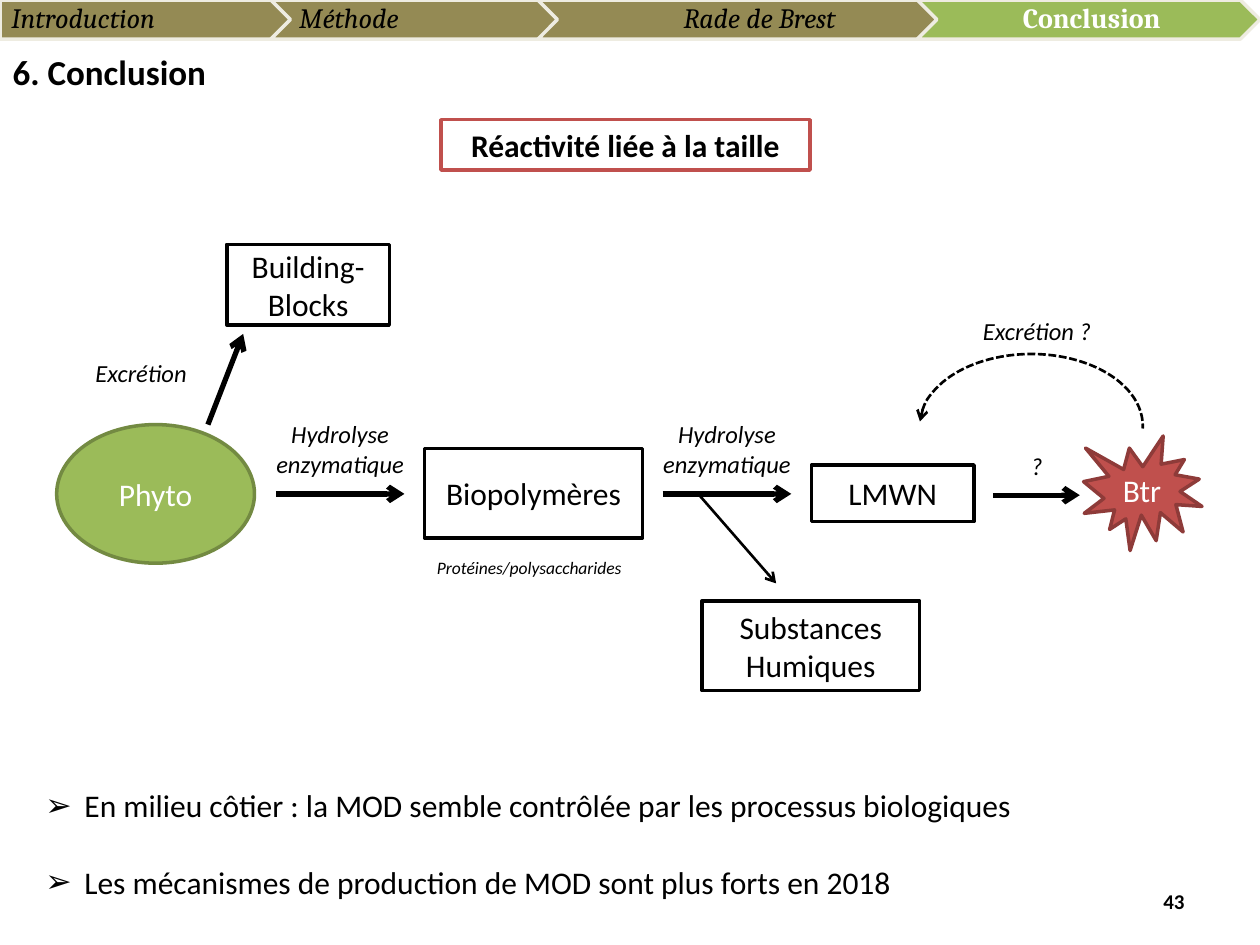
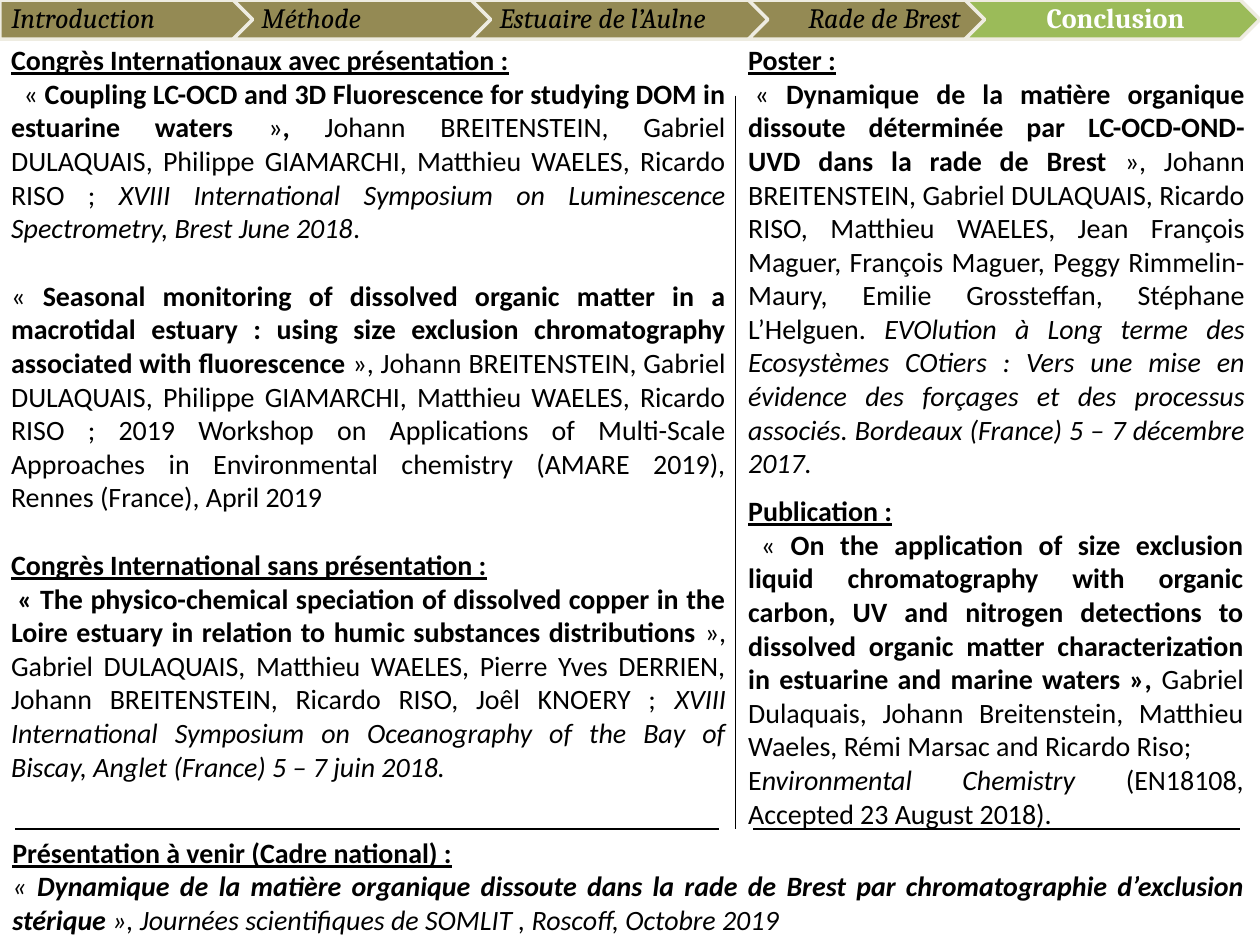
from lxml.etree import SubElement
from pptx import Presentation
from pptx.dml.color import RGBColor
from pptx.enum.dml import MSO_LINE
from pptx.enum.shapes import MSO_CONNECTOR, MSO_SHAPE
from pptx.enum.text import MSO_ANCHOR, MSO_AUTO_SIZE, PP_ALIGN
from pptx.oxml.ns import qn
from pptx.util import Inches, Pt

HUES = {
    "ink": "000000", "paper": "FFFFFF", "olive": "948A54", "cream": "EEECE1",
    "green": "9BBB59", "moss": "738A42", "red": "C0504D", "wine": "8E3B39",
}
FLAGS = {"b": "bold", "i": "italic", "u": "underline"}
LEFT, MID, RIGHT, JUST = (
    PP_ALIGN.LEFT, PP_ALIGN.CENTER, PP_ALIGN.RIGHT, PP_ALIGN.JUSTIFY)
RECT = MSO_SHAPE.RECTANGLE

# Navigation band: label, left, width, alignment; the last step is current
STEPS_1 = [
    ("Introduction", 0, 2.72, LEFT),
    ("Méthode", 2.15, 2.72, LEFT),
    ("Rade de Brest", 4.27, 3.47, MID),
    ("Conclusion", 7.28, 2.72, MID),
]
STEPS_2 = [
    ("Introduction", 0, 2.34, LEFT),
    ("Méthode", 1.85, 2.34, LEFT),
    ("Estuaire de l’Aulne", 3.74, 2.74, LEFT),
    ("Rade de Brest", 5.94, 2.11, MID),
    ("Conclusion", 7.66, 2.34, MID),
]

# Diagram: text, box, preset, fill, line, text colour
NODES = [
    ("Phyto", (0.45, 3.37, 1.57, 1.1), MSO_SHAPE.OVAL, "green", "moss", "paper"),
    ("Biopolymères", (3.37, 3.56, 1.73, 0.71), RECT, "paper", "ink", "ink"),
    ("LMWN", (6.44, 3.69, 1.29, 0.45), RECT, "paper", "ink", "ink"),
    ("Btr", (8.6, 3.46, 0.94, 0.91), MSO_SHAPE.EXPLOSION1, "red", "wine", "paper"),
    ("Building-Blocks", (1.8, 1.94, 1.29, 0.64), RECT, "paper", "ink", "ink"),
    ("Substances\nHumiques", (5.57, 4.77, 1.73, 0.71), RECT, "paper", "ink", "ink"),
]
# From, to, width
ARROWS = [
    ((2.19, 3.92), (3.21, 3.92), 3),
    ((5.26, 3.92), (6.28, 3.92), 3),
    ((7.88, 3.93), (8.57, 3.93), 3),
    ((1.65, 3.37), (1.93, 2.65), 3),
    ((5.55, 3.93), (6.16, 4.63), 1.5),
]
# Text, left, top, height
LABELS = [
    ("Hydrolyse enzymatique", 2.03, 3.28, 0.57),
    ("Hydrolyse enzymatique", 5.1, 3.28, 0.57),
    ("?", 7.56, 3.53, 0.34),
    ("Excrétion ?", 7.56, 2.46, 0.34),
    ("Excrétion", 0.45, 2.79, 0.34),
]
POINTS = [
    "En milieu côtier : la MOD semble contrôlée par les processus biologiques",
    "Les mécanismes de production de MOD sont plus forts en 2018",
]

# References: box, then paragraphs of (first indent, space before, runs)
GAP = 19.5
TALKS = (-0.01, 0.29, 5.87, 6.56), [
    (0, 0, [("bu", "Congrès Internationaux avec présentation :")]),
    (0.1, 0, [
        ("", "« "),
        ("b", "Coupling LC-OCD and 3D Fluorescence for studying DOM in "
              "estuarine waters "),
        ("", "»"), ("b", ", "),
        ("", "Johann BREITENSTEIN, Gabriel DULAQUAIS, Philippe GIAMARCHI, "
             "Matthieu WAELES, Ricardo RISO ; "),
        ("i", "XVIII International Symposium on Luminescence Spectrometry, "
              "Brest June 2018"),
        ("", ".")]),
    (0, GAP, [
        ("", "« "),
        ("b", "Seasonal monitoring of dissolved organic matter in a macrotidal "
              "estuary : using size exclusion chromatography associated with "
              "fluorescence "),
        ("", "», Johann BREITENSTEIN, Gabriel DULAQUAIS, Philippe GIAMARCHI, "
             "Matthieu WAELES, Ricardo RISO ; 2019 Workshop on Applications of "
             "Multi-Scale Approaches in Environmental chemistry (AMARE 2019), "
             "Rennes (France), April 2019")]),
    (0, GAP, [("bu", "Congrès International sans présentation :")]),
    (0.05, 0, [
        ("b", "« The physico-chemical speciation of dissolved copper in the "
              "Loire estuary in relation to humic substances distributions "),
        ("", "», Gabriel DULAQUAIS, Matthieu WAELES, Pierre Yves DERRIEN, "
             "Johann BREITENSTEIN, Ricardo RISO, Joêl KNOERY ; "),
        ("i", "XVIII International Symposium on Oceanography of the Bay of "
              "Biscay, Anglet (France) 5 – 7 juin 2018.")]),
]
PAPER = (5.84, 3.87, 4.13, 3.33), [
    (0, 0, [("bu", "Publication :")]),
    (0.1, 0, [
        ("", "« "),
        ("b", "On the application of size exclusion liquid chromatography with "
              "organic carbon, UV and nitrogen detections to dissolved organic "
              "matter characterization in estuarine and marine waters », "),
        ("", "Gabriel Dulaquais, Johann Breitenstein, Matthieu Waeles, "
             "Rémi Marsac and Ricardo Riso;")]),
    (0, 0, [
        ("", "E"), ("i", "nvironmental Chemistry"),
        ("", " (EN18108, Accepted 23 August 2018).")]),
]
POSTER = (5.84, 0.29, 4.14, 3.6), [
    (0, 0, [("bu", "Poster :")]),
    (0.05, 0, [
        ("", "« "),
        ("b", "Dynamique de la matière organique dissoute déterminée par "
              "LC-OCD-OND-UVD dans la rade de Brest"),
        ("", " », Johann BREITENSTEIN, Gabriel DULAQUAIS, Ricardo RISO, "
             "Matthieu WAELES, Jean François Maguer, François Maguer, "
             "Peggy Rimmelin-Maury, Emilie Grossteffan, Stéphane L’Helguen. "),
        ("i", "EVOlution à Long terme des Ecosystèmes COtiers : Vers une mise "
              "en évidence des forçages et des processus associés. Bordeaux "
              "(France) 5 – 7 décembre 2017.")]),
]
COMING = (0, 6.58, 9.98, 0.91), [
    (0, 0, [("bu", "Présentation à venir (Cadre national) :")]),
    (0, 0, [
        ("i", "« "),
        ("bi", "Dynamique de la matière organique dissoute dans la rade de "
               "Brest par chromatographie d’exclusion stérique"),
        ("i", " », Journées scientifiques de SOMLIT , Roscoff, Octobre 2019")]),
]
RULES = [
    ((5.84, 0.76), (5.84, 6.58)),
    ((0.12, 6.58), (5.71, 6.58)),
    ((5.98, 6.58), (9.84, 6.58)),
]


def hue(name):
    return RGBColor.from_string(HUES[name])


def apply(item, **values):
    for key, value in values.items():
        setattr(item, key, value)


def place(shape, box):
    apply(shape, **dict(zip(("left", "top", "width", "height"), map(Inches, box))))


def write(shape, paras, size, color="ink", font="Calibri",
          anchor=MSO_ANCHOR.TOP, **form):
    """Fill a shape with paragraphs of (style, text) runs."""
    frame = shape.text_frame
    apply(frame, word_wrap=True, auto_size=MSO_AUTO_SIZE.NONE,
          vertical_anchor=anchor)
    for n, runs in enumerate(paras):
        para = frame.paragraphs[0] if n == 0 else frame.add_paragraph()
        apply(para, **{"space_before": Pt(0), **form})
        for style, text in runs:
            run = para.add_run()
            run.text = text
            apply(run.font, name=font, size=Pt(size),
                  **{name: key in style for key, name in FLAGS.items()})
            run.font.color.rgb = hue(color)
    return frame


def plain(text, style=""):
    return [[(style, line)] for line in text.split("\n")]


def label(slide, box, paras, size, **form):
    shape = slide.shapes.add_textbox(*map(Inches, box))
    return write(shape, paras, size, **form)


def draw(slide, kind, box, fill, line, width=2):
    shape = slide.shapes.add_shape(kind, *map(Inches, box))
    shape.shadow.inherit = False
    if fill:
        shape.fill.solid()
        shape.fill.fore_color.rgb = hue(fill)
    else:
        shape.fill.background()
    shape.line.color.rgb = hue(line)
    shape.line.width = Pt(width)
    return shape


def tip(shape, end):
    """Put an open arrowhead on the headEnd or tailEnd of a line."""
    SubElement(shape.line._get_or_add_ln(), qn("a:" + end), type="arrow")


def link(slide, start, stop, width):
    line = slide.shapes.add_connector(
        MSO_CONNECTOR.STRAIGHT, *map(Inches, start + stop))
    line.line.color.rgb = hue("ink")
    line.line.width = Pt(width)
    SubElement(line._element.spPr, qn("a:effectLst"))
    return line


def band(slide, steps):
    for n, (text, left, width, align) in enumerate(steps):
        last = n == len(steps) - 1
        shape = draw(slide, MSO_SHAPE.CHEVRON if n else MSO_SHAPE.PENTAGON,
                     (left, 0, width, 0.31), "green" if last else "olive", "cream")
        frame = write(shape, plain(text, "b" if last else "i"), 16,
                      "paper" if last else "ink", "Cambria", MSO_ANCHOR.MIDDLE,
                      alignment=align, line_spacing=0.9)
        apply(frame, margin_left=Inches(0.07 if n else 0.09),
              margin_right=Inches(0.02))


def sum_up(deck):
    slide = deck.slides.add_slide(deck.slide_layouts[1])
    for spare in list(slide.placeholders)[2:]:
        spare._element.getparent().remove(spare._element)
    title, body = slide.shapes.title, slide.placeholders[1]
    place(title, (0, 0.3, 10, 0.54))
    write(title, plain("6. Conclusion", "b"), 20, anchor=MSO_ANCHOR.MIDDLE,
          alignment=LEFT)
    place(body, (0.26, 6.19, 8.66, 1.31))
    frame = write(body, [[("", point)] for point in POINTS], 18, alignment=LEFT)
    for n, para in enumerate(frame.paragraphs):
        para.space_before = Pt(22 if n else 0)
        props = para._p.get_or_add_pPr()
        props.set("marL", str(Inches(0.31)))
        props.set("indent", str(-Inches(0.31)))
        SubElement(props, qn("a:buChar"), char="➢")

    label(slide, (7.17, 6.95, 2.33, 0.4), plain("43", "b"), 12,
          anchor=MSO_ANCHOR.MIDDLE, alignment=RIGHT)
    theme = draw(slide, RECT, (3.5, 0.95, 2.93, 0.4), "paper", "red")
    write(theme, plain("Réactivité liée à la taille", "b"), 18, alignment=MID)
    for text, box, kind, fill, line, color in NODES:
        write(draw(slide, kind, box, fill, line), plain(text), 18, color,
              anchor=MSO_ANCHOR.MIDDLE, alignment=MID)
    for start, stop, width in ARROWS:
        tip(link(slide, start, stop, width), "tailEnd")
    loop = draw(slide, MSO_SHAPE.ARC, (7.3, 2.81, 1.77, 1.14), None, "ink", 1.5)
    loop.adjustments[0], loop.adjustments[1] = 109.33, 0.83
    loop.line.dash_style = MSO_LINE.SQUARE_DOT
    tip(loop, "headEnd")
    for text, left, top, height in LABELS:
        label(slide, (left, top, 1.34, height), plain(text, "i"), 14,
              alignment=MID)
    label(slide, (3.37, 4.37, 1.73, 0.27),
          plain("Protéines/polysaccharides", "i"), 10)
    band(slide, STEPS_1)


def cite(deck):
    slide = deck.slides.add_slide(deck.slide_layouts[6])
    band(slide, STEPS_2)
    for box, paras in (TALKS, PAPER, POSTER, COMING):
        frame = label(slide, box, [runs for *_, runs in paras], 16, alignment=JUST)
        for para, (indent, gap, _) in zip(frame.paragraphs, paras):
            para.space_before = Pt(gap)
            para._p.get_or_add_pPr().set("indent", str(Inches(indent)))
    for start, stop in RULES:
        link(slide, start, stop, 0.75)


def main():
    deck = Presentation()
    apply(deck, slide_width=Inches(10), slide_height=Inches(7.5))
    sum_up(deck)
    cite(deck)
    deck.save("out.pptx")


if __name__ == "__main__":
    main()
